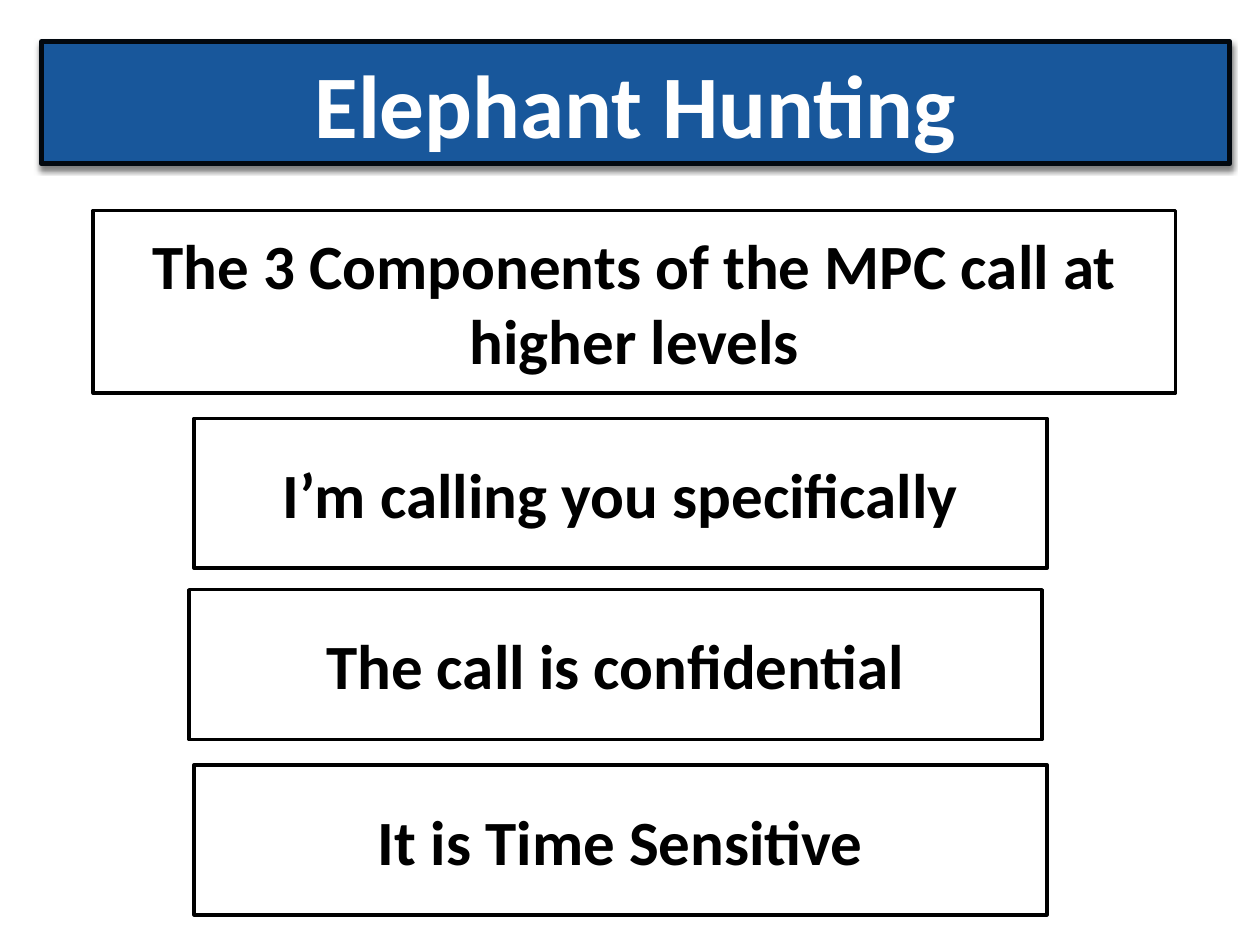
from lxml import etree
from pptx import Presentation
from pptx.dml.color import RGBColor
from pptx.enum import shapes, text
from pptx.oxml import parse_xml
from pptx.util import Pt

PX = 9144  # 100 px to the inch
COLORS = {"banner": "18579B", "edge": "02080F", "white": "FFFFFF", "black": "000000"}


def style(sp, label, size, fill, line, width, color):
    sp.fill.solid()
    sp.fill.fore_color.rgb = RGBColor.from_string(COLORS[fill])
    sp.line.color.rgb = RGBColor.from_string(COLORS[line])
    sp.line.width = Pt(width)
    tf = sp.text_frame
    tf.text = label
    tf.word_wrap = True
    tf.auto_size = text.MSO_AUTO_SIZE.NONE
    tf.vertical_anchor = text.MSO_ANCHOR.MIDDLE
    p = tf.paragraphs[0]
    p.alignment = text.PP_ALIGN.CENTER
    font = p.runs[0].font
    font.name, font.size, font.bold = "Calibri", Pt(size), True
    font.color.rgb = RGBColor.from_string(COLORS[color])


prs = Presentation()
prs.slide_width, prs.slide_height = 1000 * PX, 750 * PX
s = prs.slides.add_slide(prs.slide_layouts[5])

# Title banner with a soft shadow below
title = s.shapes.title
title.left, title.top, title.width, title.height = (v * PX for v in (33, 33, 943, 97))
style(title, "Elephant Hunting", 51, "banner", "edge", 3, "white")
ns = "http://schemas.openxmlformats.org/drawingml/2006/main"
title.element.spPr.append(parse_xml(
    f'<a:effectLst xmlns:a="{ns}">'
    f'<a:outerShdw blurRad="{Pt(3)}" dist="{Pt(2)}" dir="5400000" rotWithShape="0">'
    f'<a:srgbClr val="{COLORS["black"]}"><a:alpha val="50000"/></a:srgbClr>'
    '</a:outerShdw></a:effectLst>'))

# Heading box and the three components
boxes = [
    ("The 3 Components of the MPC call at higher levels", 74, 167, 859, 145),
    ("I’m calling you specifically", 154, 332, 677, 119),
    ("The call is confidential", 150, 468, 677, 119),
    ("It is Time Sensitive", 154, 607, 677, 119),
]
for label, *box in boxes:
    sp = s.shapes.add_shape(shapes.MSO_SHAPE.RECTANGLE, *(v * PX for v in box))
    sp.shadow.inherit = False
    style(sp, label, 36, "white", "black", 2, "black")

prs.save("out.pptx")
